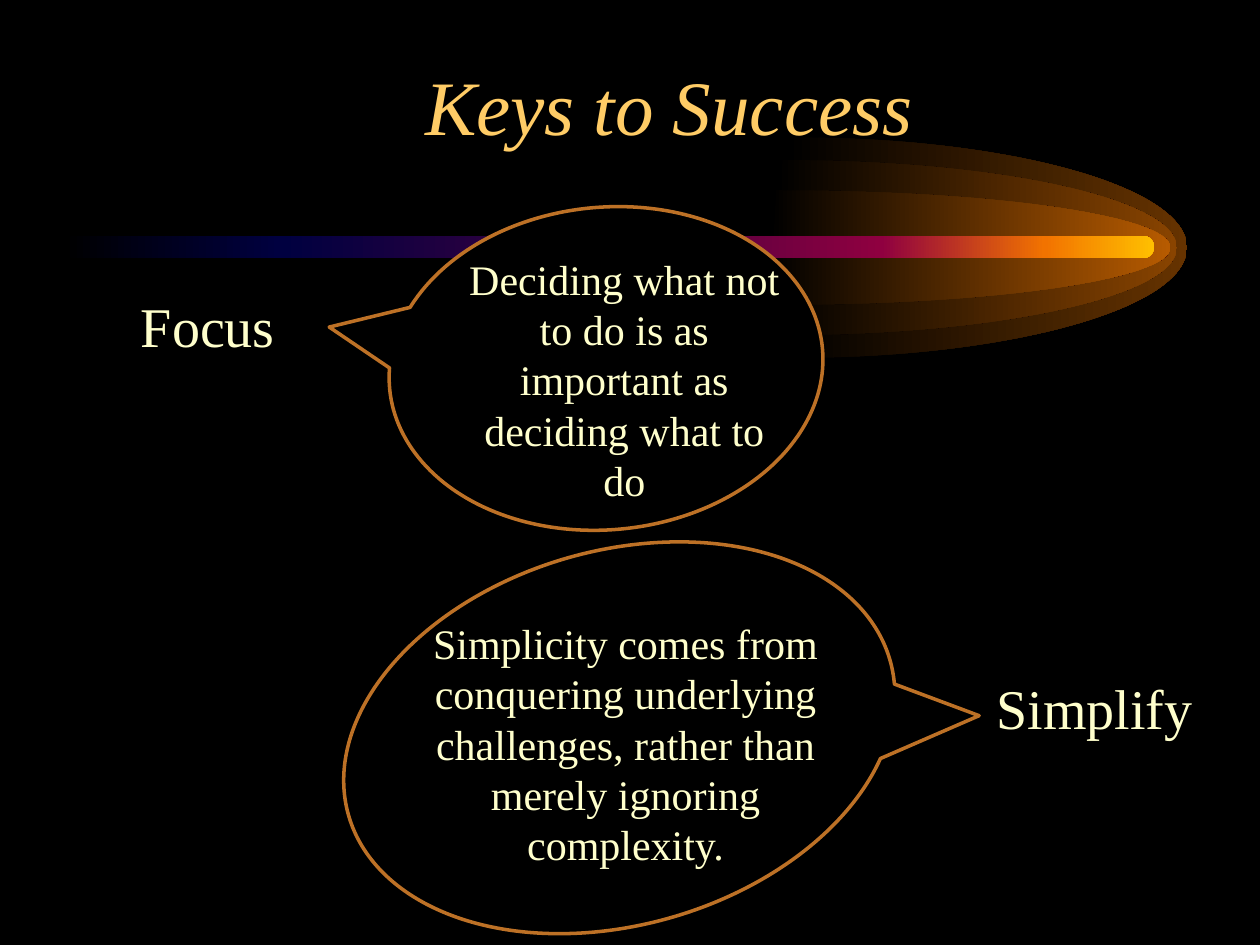
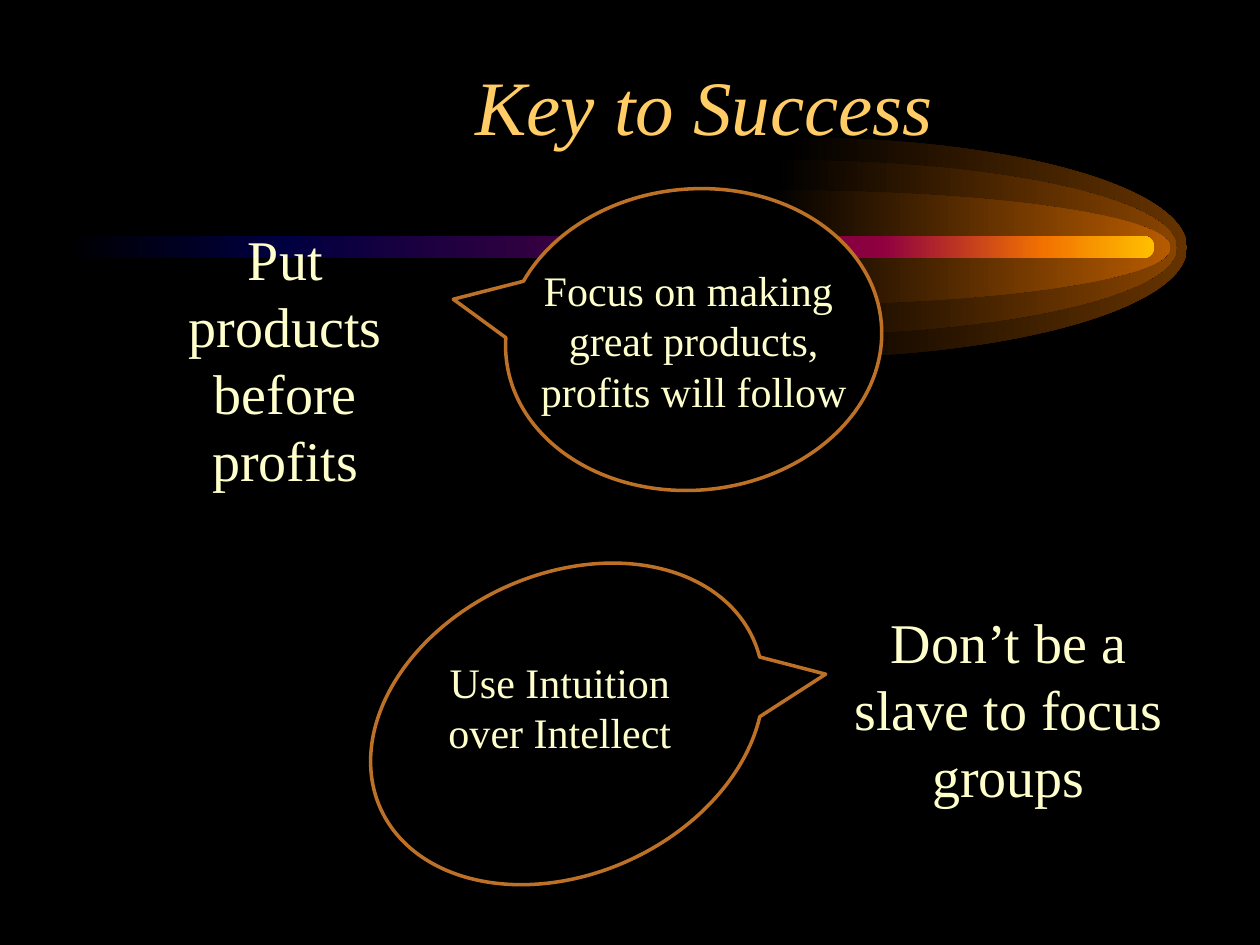
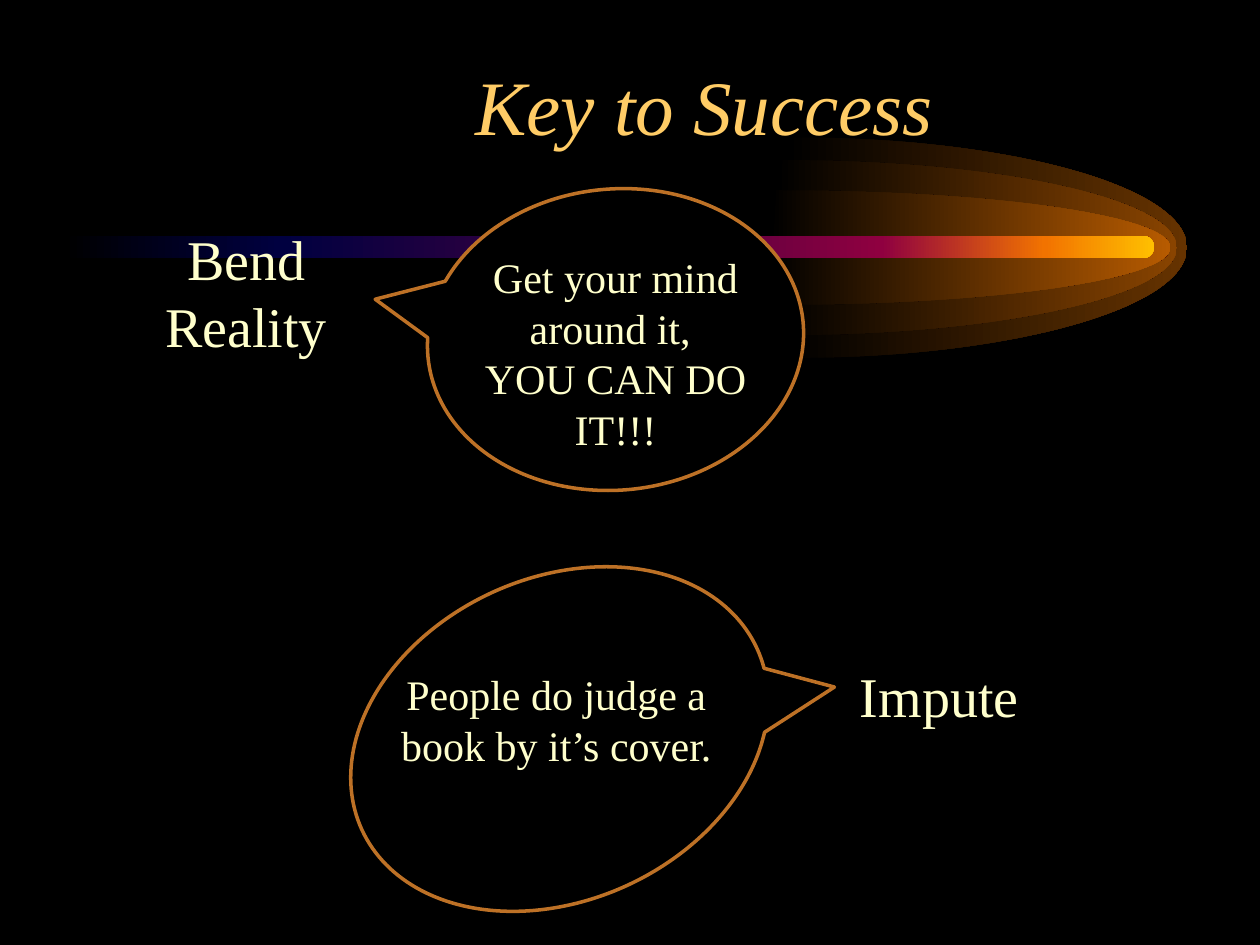
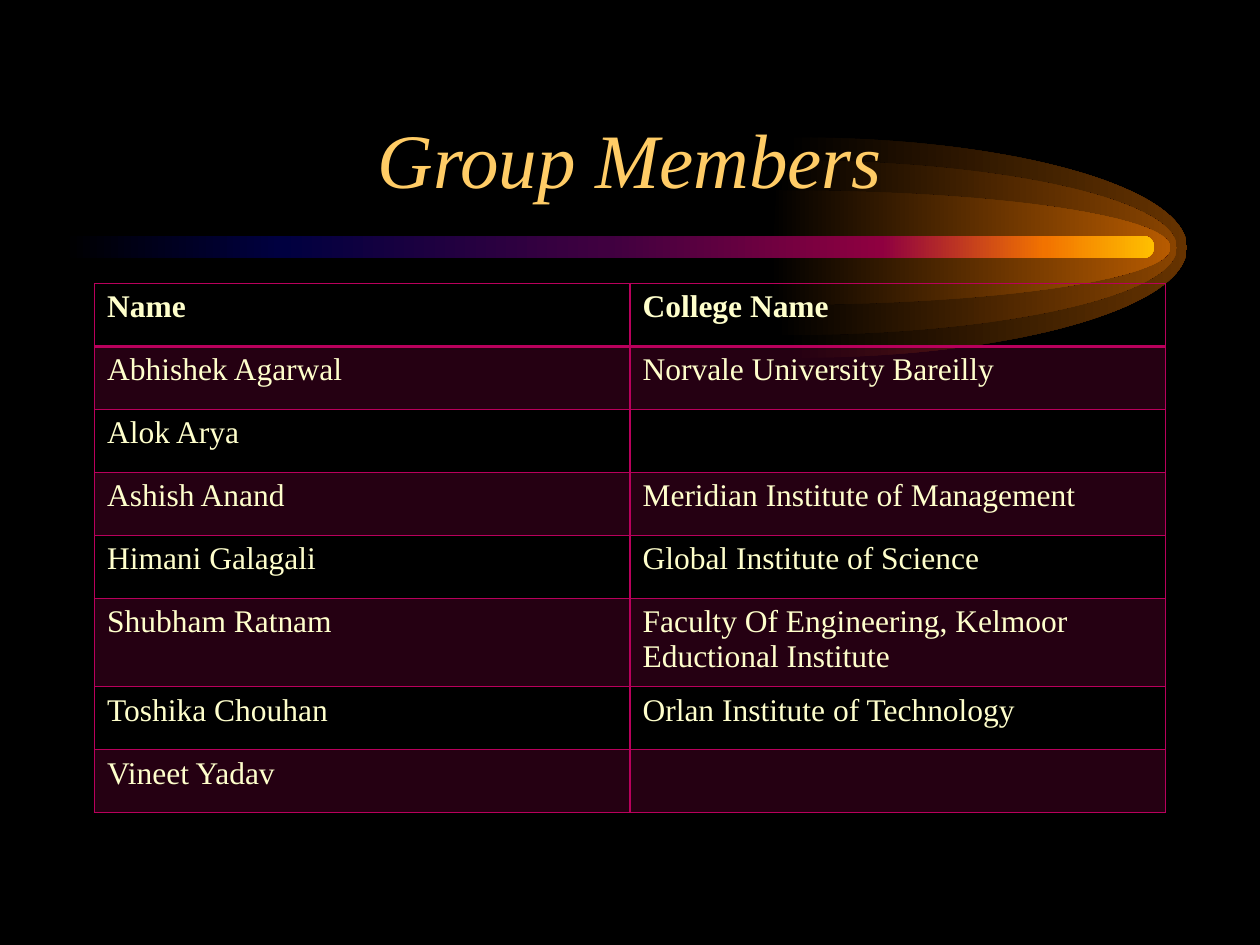
from dataclasses import dataclass

from lxml.etree import SubElement
from pptx import Presentation
from pptx.dml.color import RGBColor
from pptx.enum.shapes import MSO_SHAPE
from pptx.enum.text import MSO_ANCHOR, MSO_AUTO_SIZE, PP_ALIGN
from pptx.oxml import parse_xml
from pptx.oxml.ns import nsdecls, qn
from pptx.util import Emu, Pt

PX = 9144
BOW = 0.55
FONT = "Times New Roman"
HEX = {
    "back": "000000",
    "title": "FFCC66",
    "text": "FFFFCC",
    "edge": "BD7126",
    "grid": "B9005C",
}
BAND = [(0, "000000"), (20, "000040"), (50, "400040"),
        (75, "8F0040"), (90, "F27300"), (100, "FFBF00")]


@dataclass
class Box:
    left: int
    top: int
    width: int
    height: int

    def emu(self) -> list[Emu]:
        return [Emu(n * PX) for n in (self.left, self.top, self.width, self.height)]


@dataclass
class Halo:
    box: Box
    tint: str


@dataclass
class Bubble:
    box: Box
    turn: float


@dataclass
class Note:
    box: Box
    text: str
    size: int = 24
    align: PP_ALIGN = PP_ALIGN.CENTER
    inset: int = 5
    grow: bool = True


@dataclass
class Page:
    title: str
    place: Box
    items: list


HALOS = [
    Halo(Box(624, 109, 318, 175), "663300"),
    Halo(Box(616, 127, 318, 139), "894400"),
    Halo(Box(611, 151, 318, 91), "B75B00"),
]

RIGHT = Box(149, 0, 820, 125)
PAGES = [
    Page("Keys to Success", Box(297, 0, 468, 125), [
        Note(Box(102, 164, 184, 172), "Focus", 32, PP_ALIGN.LEFT, 67, False),
        Bubble(Box(353, 120, 256, 345), 84.6),
        Note(Box(359, 196, 273, 212),
             "Deciding what not to do is as important as deciding what to do"),
        Note(Box(781, 530, 219, 64), "Simplify", 32, PP_ALIGN.LEFT),
        Bubble(Box(343, 362, 297, 447), 254),
        Note(Box(305, 485, 383, 212),
             "Simplicity comes from conquering underlying challenges, "
             "rather than merely ignoring complexity."),
    ]),
    Page("Key to Success", RIGHT, [
        Note(Box(125, 173, 203, 226), "Put products before profits", 32),
        Bubble(Box(431, 120, 239, 299), 84.6),
        Note(Box(414, 205, 273, 131),
             "Focus on making \ngreat products, profits will follow"),
        Bubble(Box(331, 412, 238, 325), 245.4),
        Note(Box(664, 477, 273, 172), "Don’t be a slave to focus groups", 32),
        Note(Box(312, 516, 273, 91), "Use Intuition \nover Intellect "),
    ]),
    Page("Key to Success", RIGHT, [
        Note(Box(94, 173, 203, 118), "Bend Reality", 32),
        Bubble(Box(369, 120, 239, 299), 84.6),
        Note(Box(352, 195, 273, 131), "Get your mind around it, \nYOU CAN DO IT!!!"),
        Bubble(Box(316, 414, 256, 345), 245.4),
        Note(Box(609, 520, 273, 64), "Impute", 32),
        Note(Box(305, 526, 273, 91), "People do judge a book by it’s cover."),
    ]),
    Page("Group Members", Box(75, 42, 850, 125), []),
]

ROWS = [
    ("Name", "College Name"),
    ("Abhishek Agarwal", "Norvale University Bareilly"),
    ("Alok Arya", ""),
    ("Ashish Anand", "Meridian Institute of Management"),
    ("Himani Galagali", "Global Institute of Science"),
    ("Shubham Ratnam", "Faculty Of Engineering, Kelmoor Eductional Institute"),
    ("Toshika Chouhan", "Orlan Institute of Technology"),
    ("Vineet Yadav", ""),
]


def tint(name: str) -> RGBColor:
    return RGBColor.from_string(HEX[name])


def blend(shape, stops: list) -> None:
    shape.shadow.inherit = False
    shape.line.fill.background()
    shape.fill.gradient()
    shape.fill.gradient_angle = 0
    group = shape._element.spPr.find(".//" + qn("a:gsLst"))
    group.clear()
    for place, code in stops:
        stop = SubElement(group, qn("a:gs"), pos=str(place * 1000))
        SubElement(stop, qn("a:srgbClr"), val=code)


def curve(shape) -> None:
    lines = list(shape._element.spPr.iter(qn("a:lnTo")))
    for first in (0, 3):
        bend, *rest = lines[first:first + 3]
        bend.tag = qn("a:cubicBezTo")
        for line in rest:
            bend.append(line[0])
            line.getparent().remove(line)


def add_halo(slide, halo: Halo) -> object:
    box = halo.box
    base, right = box.top + box.height, box.left + box.width
    mid, high = box.top + box.height / 2, box.height / 2
    start, wide = box.left + 5, box.width - 5
    bow, rise = start + wide * BOW, high * BOW
    points = [(bow, box.top), (right, mid - rise), (right, mid),
              (right, mid + rise), (bow, base), (start, base), (box.left, base)]
    form = slide.shapes.build_freeform(start * PX, box.top * PX, scale=1.0)
    form.add_line_segments([(x * PX, y * PX) for x, y in points], close=True)
    shape = form.convert_to_shape()
    curve(shape)
    blend(shape, [(0, HEX["back"]), (100, halo.tint)])
    return shape


def add_comet(slide) -> None:
    parts = [add_halo(slide, halo) for halo in HALOS]
    band = slide.shapes.add_shape(MSO_SHAPE.ROUNDED_RECTANGLE,
                                  *Box(50, 187, 866, 18).emu())
    band.adjustments[0] = 0.5
    blend(band, BAND)
    for part in [*parts, band]:
        slide.slide_layout.shapes.element.append(part.element)


def style(frame, size: int, color: str, bold: bool = False, slant: bool = False) -> None:
    for para in frame.paragraphs:
        for run in para.runs:
            font = run.font
            font.name, font.size = FONT, Pt(size)
            font.bold, font.italic = bold, slant
            font.color.rgb = tint(color)


def add_title(slide, text: str, box: Box) -> None:
    frame = slide.shapes.add_textbox(*box.emu()).text_frame
    frame.word_wrap = True
    frame.vertical_anchor = MSO_ANCHOR.BOTTOM
    frame.text = text
    frame.paragraphs[0].alignment = PP_ALIGN.CENTER
    style(frame, 44, "title", slant=True)


def add_note(slide, note: Note) -> None:
    frame = slide.shapes.add_textbox(*note.box.emu()).text_frame
    frame.word_wrap = True
    frame.auto_size = (MSO_AUTO_SIZE.SHAPE_TO_FIT_TEXT if note.grow
                       else MSO_AUTO_SIZE.NONE)
    frame.margin_top = Emu(note.inset * PX)
    frame.text = note.text
    for para in frame.paragraphs:
        para.alignment = note.align
    style(frame, note.size, "text")


def add_bubble(slide, bubble: Bubble) -> None:
    shape = slide.shapes.add_shape(MSO_SHAPE.OVAL_CALLOUT, *bubble.box.emu())
    shape.rotation = bubble.turn
    shape.shadow.inherit = False
    shape.fill.solid()
    shape.fill.fore_color.rgb = tint("back")
    shape.line.color.rgb = tint("edge")
    shape.line.width = Pt(2)


def add_edges(cell, base: int) -> None:
    props = cell._tc.get_or_add_tcPr()
    for spot, side in enumerate("LRTB"):
        width = Pt(base if side == "B" else 1)
        props.insert(spot, parse_xml(
            f'<a:ln{side} {nsdecls("a")} w="{width}"><a:solidFill>'
            f'<a:srgbClr val="{HEX["grid"]}"/></a:solidFill></a:ln{side}>'))


def add_grid(slide) -> None:
    box = Box(75, 225, 850, 422)
    holder = slide.shapes.add_table(len(ROWS), 2, *box.emu())
    table = holder.table
    table.first_row = table.horz_banding = False
    for r, row in enumerate(ROWS):
        table.rows[r].height = Emu(50 * PX)
        for c, text in enumerate(row):
            cell = table.cell(r, c)
            cell.text_frame.text = text
            style(cell.text_frame, 18, "text", bold=r == 0)
            if r % 2:
                cell.fill.solid()
                cell.fill.fore_color.rgb = tint("grid")
                color = cell._tc.tcPr.find(".//" + qn("a:srgbClr"))
                SubElement(color, qn("a:alpha"), val="20000")
            else:
                cell.fill.background()
            add_edges(cell, 1 if r else 2)
    holder.height = Emu(box.height * PX)


def main() -> None:
    deck = Presentation()
    deck.slide_width, deck.slide_height = Emu(1000 * PX), Emu(750 * PX)
    blank = deck.slide_layouts[6]
    blank.background.fill.solid()
    blank.background.fill.fore_color.rgb = tint("back")
    slides = [deck.slides.add_slide(blank) for _ in PAGES]
    add_comet(slides[0])
    draw = {Note: add_note, Bubble: add_bubble}
    for slide, page in zip(slides, PAGES):
        add_title(slide, page.title, page.place)
        for item in page.items:
            draw[type(item)](slide, item)
    add_grid(slides[-1])
    deck.save("out.pptx")


if __name__ == "__main__":
    main()
